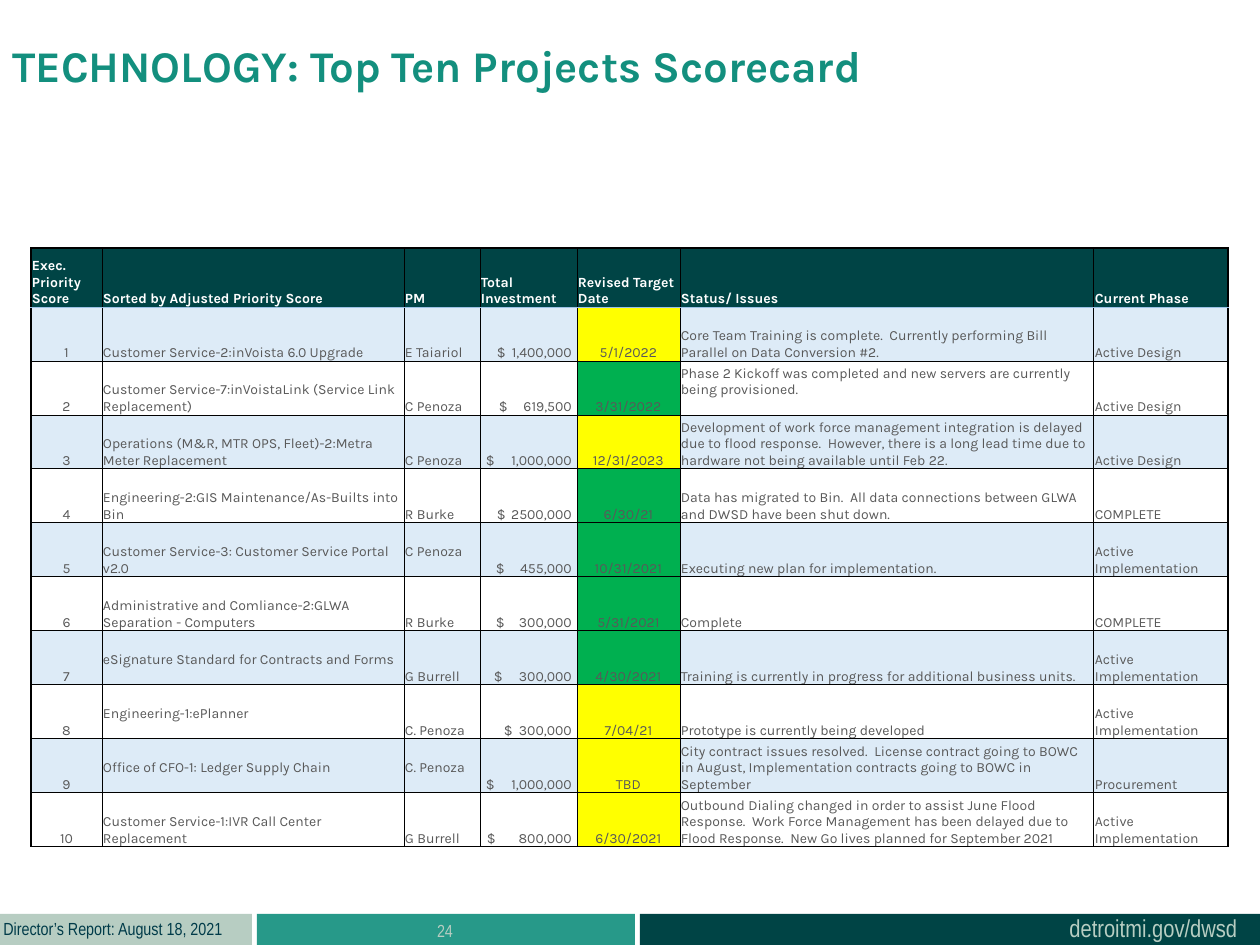
from lxml.etree import SubElement
from pptx import Presentation
from pptx.dml.color import RGBColor
from pptx.enum.shapes import MSO_SHAPE
from pptx.enum.text import MSO_ANCHOR, PP_ALIGN
from pptx.oxml import parse_xml
from pptx.oxml.ns import nsdecls, qn
from pptx.util import Pt

SCALE = 914400 / 126
COLORS = {
    "teal": "279989", "dark": "004445", "sage": "B7CDC2", "navy": "003B49",
    "title": "138F7E", "white": "FFFFFF", "gray": "595959", "band": "DDEBF7",
    "yellow": "FFFF00", "green": "00B050", "black": "000000", "blue": "9BC2E6",
}
WIDTHS = [71, 302, 76, 97, 103, 414, 134]
HEAD, ROW = 59, 54
LIFT = 17
TAB = 92
LEFT, CENTER = PP_ALIGN.LEFT, PP_ALIGN.CENTER
ALIGNS = [CENTER, LEFT, LEFT, LEFT, CENTER, LEFT, LEFT]
HEADERS = ["Exec. Priority Score", "Sorted by Adjusted Priority Score", "PM",
           "Total Investment", "Revised Target Date", "Status/ Issues", "Current Phase"]
PROJECTS = [
    ("Customer Service-2:inVoista 6.0 Upgrade", "E Taiariol", "1,400,000", "5/1/2022",
     "Core Team Training is complete.  Currently performing Bill Parallel on Data Conversion #2.",
     "Active Design"),
    ("Customer Service-7:inVoistaLink (Service Link Replacement)", "C Penoza", "619,500",
     "3/31/2022",
     "Phase 2 Kickoff was completed and new servers are currently being provisioned.",
     "Active Design"),
    ("Operations (M&R, MTR OPS, Fleet)-2:Metra Meter Replacement", "C Penoza", "1,000,000",
     "12/31/2023",
     "Development of work force management integration is delayed due to flood response.  "
     "However, there is a long lead time due to hardware not being available until Feb 22.",
     "Active Design"),
    ("Engineering-2:GIS Maintenance/As-Builts into Bin", "R Burke", "2500,000", "6/30/21",
     "Data has migrated to Bin.  All data connections between GLWA and DWSD have been shut down.",
     "COMPLETE"),
    ("Customer Service-3: Customer Service Portal v2.0", "C Penoza", "455,000", "10/31/2021",
     "Executing new plan for implementation.", "Active Implementation"),
    ("Administrative and Comliance-2:GLWA Separation - Computers", "R Burke", "300,000",
     "5/31/2021", "Complete", "COMPLETE"),
    ("eSignature Standard for Contracts and Forms", "G Burrell", "300,000", "4/30/2021",
     "Training is currently in progress for additional business units.",
     "Active Implementation"),
    ("Engineering-1:ePlanner", "C. Penoza", "300,000", "7/04/21",
     "Prototype is currently being developed", "Active Implementation"),
    ("Office of CFO-1: Ledger Supply Chain", "C. Penoza", "1,000,000", "TBD",
     "City contract issues resolved.  License contract going to BOWC in August, "
     "Implementation contracts going to BOWC in September", "Procurement"),
    ("Customer Service-1:IVR Call Center Replacement", "G Burrell", "800,000", "6/30/2021",
     "Outbound Dialing changed in order to assist June Flood Response.  Work Force Management "
     "has been delayed due to Flood Response.  New Go lives planned for September 2021",
     "Active Implementation"),
]
DOLLARS = [17, 19, 6, 17, 16, 16, 14, 24, 6, 7]
ON_TRACK = {2, 4, 5, 6, 7}
RAISED = {(2, 5), (5, 2), (7, 1), (8, 1), (9, 1), (9, 2)}


def px(n):
    return round(n * SCALE)


def rgb(name):
    return RGBColor.from_string(COLORS[name])


def style(frame, size, face, color, bold=False, align=LEFT):
    for para in frame.paragraphs:
        para.alignment = align
        for run in para.runs:
            font = run.font
            font.size, font.name, font.bold = Pt(size), face, bold
            font.color.rgb = rgb(color)


def add_bar(slide, x, width, color):
    bar = slide.shapes.add_shape(MSO_SHAPE.RECTANGLE, px(x), px(914), px(width), px(31))
    bar.shadow.inherit = False
    bar.fill.solid()
    bar.fill.fore_color.rgb = rgb(color)
    bar.line.fill.background()


def add_label(slide, box, text, size, face, color, bold=False, align=LEFT, wrap=True):
    frame = slide.shapes.add_textbox(*map(px, box)).text_frame
    frame.word_wrap = wrap
    frame.text = text
    style(frame, size, face, color, bold, align)


def set_edges(cell, row, col):
    last = len(PROJECTS)
    edges = [
        ("L", 1 if col == 0 else 0.5, "black"),
        ("R", 1 if col == len(WIDTHS) - 1 else 0.5, "black"),
        ("T", 1 if row == 0 else 0.5, "blue" if row == 1 else "black"),
        ("B", 1 if row == last else 0.5, "blue" if row == 0 else "black"),
    ]
    props = cell._tc.get_or_add_tcPr()
    for spot, (side, width, color) in enumerate(edges):
        line = parse_xml(
            f'<a:ln{side} {nsdecls("a")} w="{Pt(width)}"><a:solidFill>'
            f'<a:srgbClr val="{COLORS[color]}"/></a:solidFill></a:ln{side}>')
        props.insert(spot, line)


def set_tab(para, place):
    tabs = SubElement(para._p.get_or_add_pPr(), qn("a:tabLst"))
    SubElement(tabs, qn("a:tab"), pos=str(px(place)), algn="r")


def pick_fill(row, col):
    if row == 0:
        return "dark"
    if col == 4:
        return "green" if row in ON_TRACK else "yellow"
    return "band" if row % 2 else "white"


def fill_cell(cell, row, col, text):
    cell.margin_left = cell.margin_right = cell.margin_top = px(1)
    cell.margin_bottom = px(LIFT if (row, col) in RAISED else 0)
    cell.vertical_anchor = MSO_ANCHOR.BOTTOM
    cell.fill.solid()
    cell.fill.fore_color.rgb = rgb(pick_fill(row, col))
    frame = cell.text_frame
    frame.text = text
    if row and col == 3:
        indent = DOLLARS[row - 1]
        cell.margin_left = px(indent)
        frame.text = f"$\t{text}"
        set_tab(frame.paragraphs[0], TAB - indent)
    style(frame, 8, "Karla", "gray" if row else "white", row == 0,
          ALIGNS[col] if row else LEFT)
    set_edges(cell, row, col)


def add_scores(slide):
    rows = [HEADERS] + [(str(n), *item) for n, item in enumerate(PROJECTS, 1)]
    high = HEAD + ROW * len(PROJECTS)
    table = slide.shapes.add_table(len(rows), len(WIDTHS), px(31), px(248),
                                   px(sum(WIDTHS)), px(high)).table
    table.first_row = table.horz_banding = False
    for col, width in enumerate(WIDTHS):
        table.columns[col].width = px(width)
    for r, texts in enumerate(rows):
        table.rows[r].height = px(ROW if r else HEAD)
        for c, text in enumerate(texts):
            fill_cell(table.cell(r, c), r, c, text)


def main():
    deck = Presentation()
    deck.slide_width, deck.slide_height = px(1260), px(945)
    slide = deck.slides.add_slide(deck.slide_layouts[6])
    for x, width, color in [(257, 378, "teal"), (640, 620, "dark"), (0, 252, "sage")]:
        add_bar(slide, x, width, color)
    narrow = "Arial Narrow"
    add_label(slide, (1057, 907, 195, 43), "detroitmi.gov/dwsd", 14, narrow, "sage", wrap=False)
    add_label(slide, (-9, 912, 254, 34), "Director’s Report: August 18, 2021", 10, narrow,
              "navy", wrap=False)
    add_label(slide, (256, 914, 378, 31), "24", 10, narrow, "sage", align=CENTER)
    add_label(slide, (0, 33, 956, 97), "TECHNOLOGY: Top Ten Projects Scorecard", 25, "Karla",
              "title", bold=True)
    add_scores(slide)
    deck.save("out.pptx")


if __name__ == "__main__":
    main()
